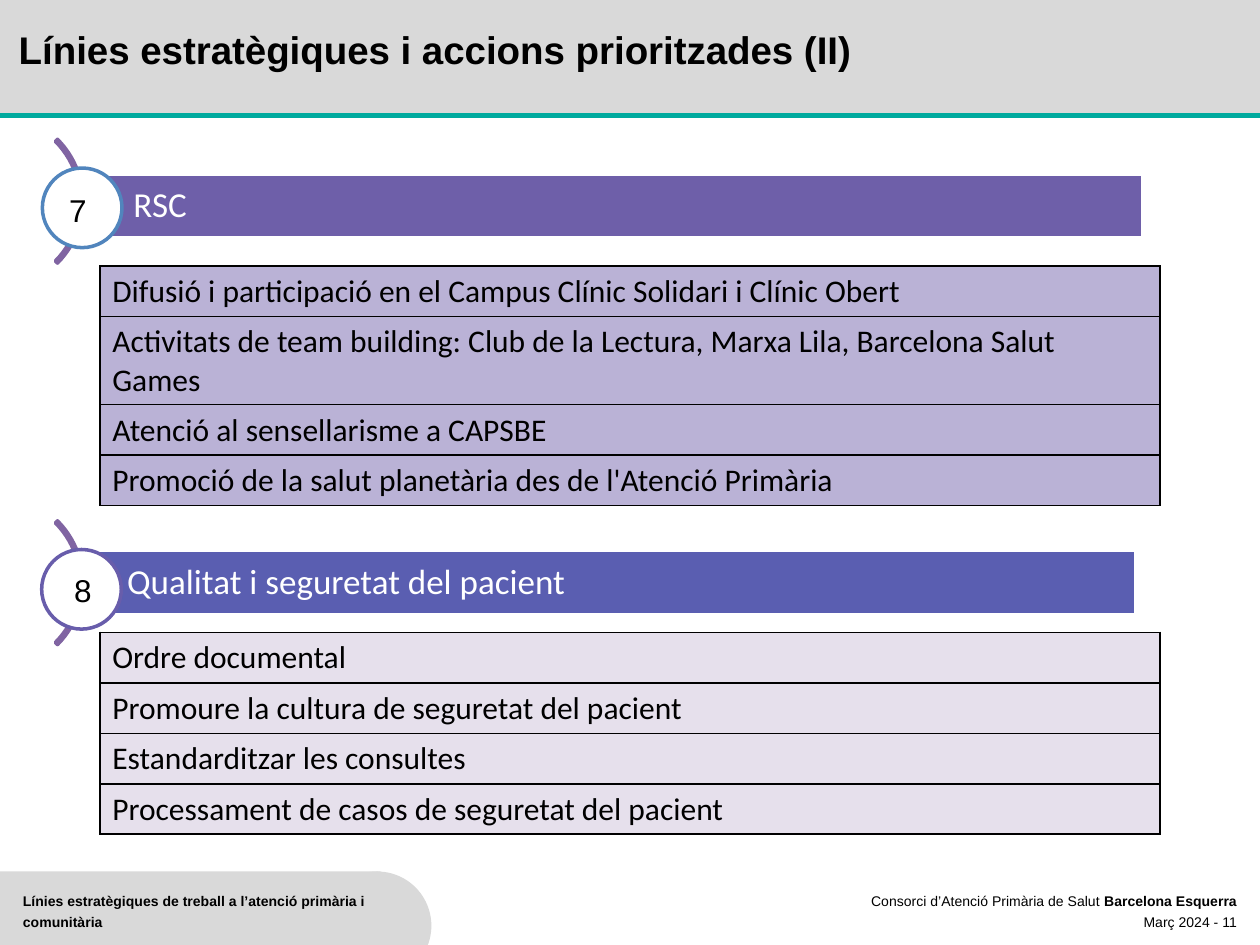
import dataclasses

import lxml.etree
import pptx
import pptx.dml.color
import pptx.enum.shapes
import pptx.enum.text
import pptx.oxml.ns
import pptx.util

Pt = pptx.util.Pt
SHAPE = pptx.enum.shapes.MSO_SHAPE
ALIGN = pptx.enum.text.PP_ALIGN
ANCHOR = pptx.enum.text.MSO_ANCHOR
qn = pptx.oxml.ns.qn


@dataclasses.dataclass(frozen=True)
class Theme:
    grey: str = "D9D9D9"
    teal: str = "00AA9E"
    black: str = "000000"
    white: str = "FFFFFF"
    arc: str = "8064A2"
    heading_font: str = "Arial"
    body_font: str = "Calibri"
    title_size: float = 22
    bar_size: float = 20
    body_size: float = 18
    footer_size: float = 8


def rgb(value):
    return pptx.dml.color.RGBColor.from_string(value)


def add_text(paragraph, text, *, size, font, color, bold=False,
             align=ALIGN.LEFT, spacing=None):
    """Append one formatted run to a paragraph."""
    paragraph.alignment = align
    if spacing is not None:
        paragraph.line_spacing = spacing
    run = paragraph.add_run()
    run.text = text
    run.font.size = Pt(size)
    run.font.name = font
    run.font.bold = bold
    run.font.color.rgb = rgb(color)


class SlideBuilder:
    def __init__(self, slide, theme):
        self.slide = slide
        self.theme = theme

    def shape(self, kind, box, fill=None, line=None, width=2):
        shape = self.slide.shapes.add_shape(kind, *map(Pt, box))
        shape.shadow.inherit = False
        if fill:
            shape.fill.solid()
            shape.fill.fore_color.rgb = rgb(fill)
        else:
            shape.fill.background()
        if line:
            shape.line.color.rgb = rgb(line)
            shape.line.width = Pt(width)
        else:
            shape.line.fill.background()
        return shape

    def text(self, box, paragraphs, **style):
        """Each paragraph is a list of (text, bold) pieces."""
        frame = self.slide.shapes.add_textbox(*map(Pt, box)).text_frame
        frame.word_wrap = True
        style = {"font": self.theme.heading_font, "color": self.theme.black, **style}
        for index, pieces in enumerate(paragraphs):
            paragraph = frame.add_paragraph() if index else frame.paragraphs[0]
            for words, bold in pieces:
                add_text(paragraph, words, bold=bold, **style)

    def rule(self, start, end, color, width):
        rule = self.slide.shapes.add_connector(
            pptx.enum.shapes.MSO_CONNECTOR.STRAIGHT, *map(Pt, start + end))
        rule.line.color.rgb = rgb(color)
        rule.line.width = Pt(width)
        lxml.etree.SubElement(rule.line._get_or_add_ln().getparent(), qn("a:effectLst"))

    def bar(self, box, words, fill):
        theme = self.theme
        frame = self.shape(SHAPE.RECTANGLE, box, fill, theme.white).text_frame
        frame.word_wrap = True
        frame.vertical_anchor = ANCHOR.MIDDLE
        frame.margin_left = Pt(29.5)
        frame.margin_top = frame.margin_right = frame.margin_bottom = Pt(4)
        add_text(frame.paragraphs[0], words, size=theme.bar_size,
                 font=theme.body_font, color=theme.white, spacing=0.9)

    def borders(self, cell):
        properties = cell._tc.get_or_add_tcPr()
        for position, side in enumerate(("lnL", "lnR", "lnT", "lnB")):
            border = lxml.etree.Element(qn(f"a:{side}"), w=str(Pt(1)))
            fill = lxml.etree.SubElement(border, qn("a:solidFill"))
            lxml.etree.SubElement(fill, qn("a:srgbClr"), val=self.theme.black)
            properties.insert(position, border)

    def table(self, left, top, width, rows, fill):
        """Rows are (text, height) pairs in a single column."""
        heights = [height for _, height in rows]
        table = self.slide.shapes.add_table(
            len(rows), 1, Pt(left), Pt(top), Pt(width), Pt(sum(heights))).table
        table.first_row = table.horz_banding = False
        for index, (words, height) in enumerate(rows):
            table.rows[index].height = Pt(height)
            cell = table.cell(index, 0)
            cell.fill.solid()
            cell.fill.fore_color.rgb = rgb(fill)
            self.borders(cell)
            add_text(cell.text_frame.paragraphs[0], words, size=self.theme.body_size,
                     font=self.theme.body_font, color=self.theme.black)

    def strategic_line(self, number, heading, actions, *, arc_top, bar_at, circle_at,
                       number_box, table_top, bar_fill, ring, table_fill):
        theme = self.theme
        arc = self.shape(SHAPE.BLOCK_ARC, (-52.5, arc_top, 100, 100), line=theme.arc)
        for index, value in enumerate((189, 27, 0.017)):
            arc.adjustments[index] = value
        self.bar((*bar_at, 606, 36.7), heading, bar_fill)
        self.shape(SHAPE.OVAL, (*circle_at, 45.5, 45.5), theme.white, ring)
        self.table(57, table_top, 606, actions, table_fill)
        self.text(number_box, [[(number, False)]], size=theme.body_size)


def main():
    theme = Theme()
    deck = pptx.Presentation()
    deck.slide_width, deck.slide_height = Pt(720), Pt(540)
    page = SlideBuilder(deck.slides.add_slide(deck.slide_layouts[6]), theme)

    # Footer and header bands
    page.shape(SHAPE.RECTANGLE, (0, 498, 217.5, 52), theme.grey)
    page.shape(SHAPE.OVAL, (184.5, 498, 62, 62), theme.grey)
    page.shape(SHAPE.RECTANGLE, (0, 0, 720, 66), theme.grey)
    page.rule((0, 66), (720, 66), theme.teal, 3)

    # Footer texts
    page.text((6, 504, 217.5, 34),
              [[("Línies estratègiques de treball a l’atenció primària i comunitària", True)]],
              size=theme.footer_size, spacing=Pt(12))
    page.text((486, 504, 228, 36),
              [[("Consorci d’Atenció Primària de Salut ", False), ("Barcelona Esquerra", True)],
               [("Març 2024 - 11", False)]],
              size=theme.footer_size, spacing=Pt(12), align=ALIGN.RIGHT)

    # Title
    page.text((3.6, 16, 614, 29.5),
              [[("Línies estratègiques i accions prioritzades (II)", True)]],
              size=theme.title_size, spacing=Pt(22))

    # Strategic lines with their actions
    row, double_row = 28.8, 50
    page.strategic_line(
        "7", "RSC",
        [("Difusió i participació en el Campus Clínic Solidari i Clínic Obert", row),
         ("Activitats de team building: Club de la Lectura, Marxa Lila, "
          "Barcelona Salut Games", double_row),
         ("Atenció al sensellarisme a CAPSBE", row),
         ("Promoció de la salut planetària des de l'Atenció Primària", row)],
        arc_top=65, bar_at=(46.8, 99.4), circle_at=(24.2, 96),
        number_box=(32.4, 105.8, 29.5, 28.8), table_top=152,
        bar_fill="6E5FA9", ring="5185BD", table_fill="BAB2D6")
    page.strategic_line(
        "8", "Qualitat i seguretat del pacient",
        [("Ordre documental", row),
         ("Promoure la cultura de seguretat del pacient", row),
         ("Estandarditzar les consultes", row),
         ("Processament de casos de seguretat del pacient", row)],
        arc_top=283, bar_at=(43.2, 314.6), circle_at=(23.8, 314),
        number_box=(35.3, 322.6, 23.8, 28.8), table_top=361.4,
        bar_fill="5A5EB1", ring="685DAB", table_fill="E6E0EC")

    deck.save("out.pptx")


if __name__ == "__main__":
    main()
